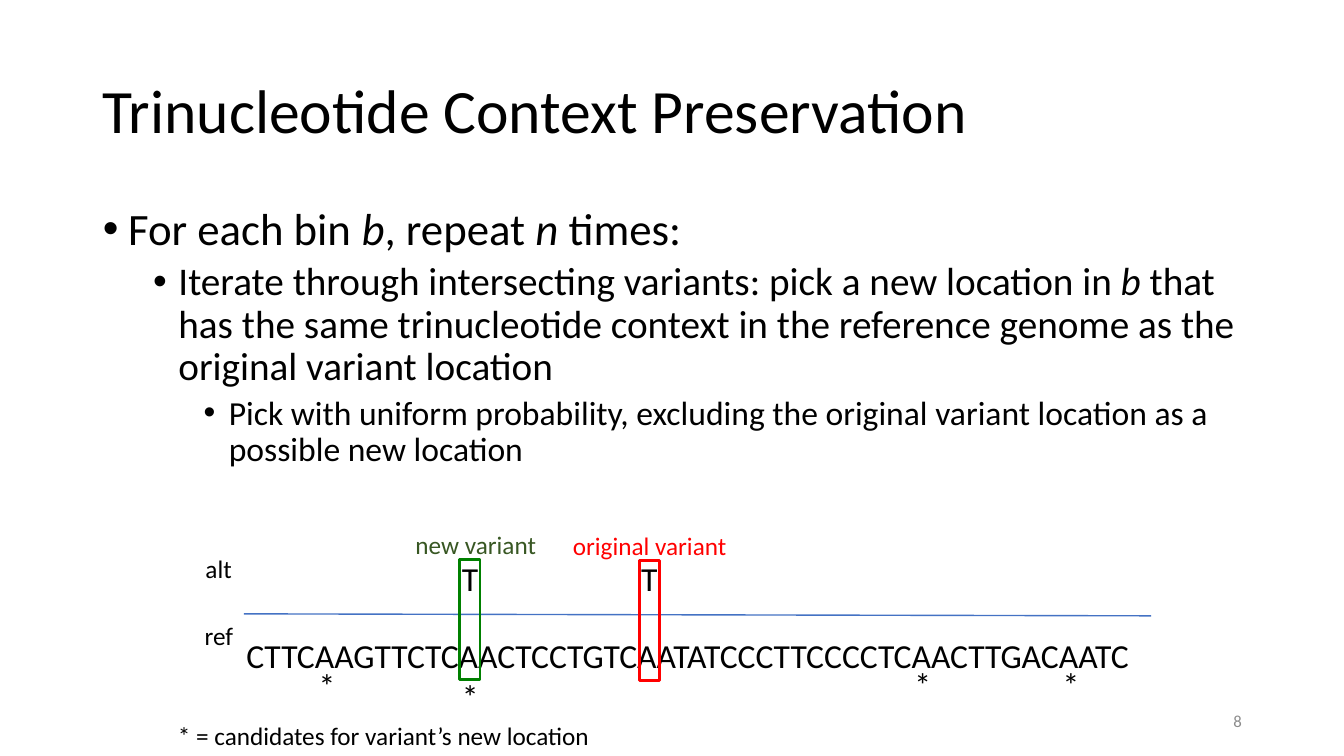
import collections

import pptx
import pptx.dml.color
import pptx.enum.shapes
import pptx.enum.text
import pptx.oxml
import pptx.oxml.ns
import pptx.util

RGBColor = pptx.dml.color.RGBColor
ALIGN = pptx.enum.text.PP_ALIGN
ANCHOR = pptx.enum.text.MSO_ANCHOR

BLACK = RGBColor(0x00, 0x00, 0x00)
GRAY = RGBColor(0x8C, 0x8C, 0x8C)
BLUE = RGBColor(0x44, 0x72, 0xC4)
RED = RGBColor(0xFF, 0x00, 0x00)
GREEN = RGBColor(0x00, 0x80, 0x00)
DARK_GREEN = RGBColor(0x38, 0x57, 0x23)
FONT = "Calibri"

SLIDE_WIDTH = pptx.util.Inches(13.33)
SLIDE_HEIGHT = pptx.util.Inches(7.5)

# All boxes are percentages of the slide's width and height.
Box = collections.namedtuple("Box", "left top width height")
TITLE = Box(6.9, 5.33, 86.25, 19.33)
STEPS = Box(6.9, 26.67, 86.25, 63.47)
NUMBER = Box(70.65, 92.67, 22.5, 5.33)
ALIGNMENT = Box(12.5, 69.33, 74.2, 30.67)

SMALL_ROW, LARGE_ROW = 5.33, 6.67
LETTER_WIDTH = 2.8
FRAME_WIDTH, FRAME_HEIGHT = 1.5, 15.87


def across(share):
    return round(SLIDE_WIDTH * share / 100)


def down(share):
    return round(SLIDE_HEIGHT * share / 100)


def emu(box):
    return across(box.left), down(box.top), across(box.width), down(box.height)


def within(outer, left, top, width, height):
    return Box(outer.left + left, outer.top + top, width, height)


def move(shape, box):
    shape.left, shape.top, shape.width, shape.height = emu(box)


def write(paragraph, text, size=18, color=BLACK, align=ALIGN.LEFT):
    """Fill a paragraph; parts between underscores are italic."""
    paragraph.alignment = align
    for index, part in enumerate(text.split("_")):
        run = paragraph.add_run()
        run.text = part
        run.font.name = FONT
        run.font.size = pptx.util.Pt(size)
        run.font.color.rgb = color
        run.font.italic = index % 2 == 1


def add_text(slide, box, text, wrap=False, anchor=ANCHOR.TOP, **style):
    frame = slide.shapes.add_textbox(*emu(box)).text_frame
    frame.word_wrap = wrap
    frame.vertical_anchor = anchor
    write(frame.paragraphs[0], text, **style)


def set_bullet(paragraph, level):
    properties = paragraph._p.get_or_add_pPr()
    properties.set("marL", str(pptx.util.Inches(0.25 + 0.5 * level)))
    properties.set("indent", str(-pptx.util.Inches(0.25)))
    namespace = pptx.oxml.ns.nsdecls("a")
    properties.append(pptx.oxml.parse_xml(f'<a:buFont {namespace} typeface="Arial"/>'))
    properties.append(pptx.oxml.parse_xml(f'<a:buChar {namespace} char="•"/>'))


def add_title(slide, box):
    title = slide.shapes.title
    move(title, box)
    frame = title.text_frame
    frame.auto_size = pptx.enum.text.MSO_AUTO_SIZE.NONE
    frame.vertical_anchor = ANCHOR.MIDDLE
    frame.paragraphs[0].line_spacing = 0.9
    write(frame.paragraphs[0], "Trinucleotide Context Preservation", size=44)


def add_steps(slide, box):
    steps = slide.placeholders[1]
    move(steps, box)
    frame = steps.text_frame
    frame.auto_size = pptx.enum.text.MSO_AUTO_SIZE.NONE
    lines = [
        ("For each bin _b_, repeat _n_ times:", 32, 10),
        ("Iterate through intersecting variants: pick a new location in _b_ that has the same "
         "trinucleotide context in the reference genome as the original variant location", 28, 5),
        ("Pick with uniform probability, excluding the original variant location "
         "as a possible new location", 24, 5),
    ]
    for level, (text, size, space) in enumerate(lines):
        paragraph = frame.add_paragraph() if level else frame.paragraphs[0]
        paragraph.level = level
        paragraph.line_spacing = 0.9
        paragraph.space_before = pptx.util.Pt(space)
        paragraph.space_after = pptx.util.Pt(0)
        set_bullet(paragraph, level)
        write(paragraph, text, size=size)


def add_divider(slide, box):
    """Draw the line between the alt and ref rows."""
    divider = slide.shapes.add_connector(
        pptx.enum.shapes.MSO_CONNECTOR.STRAIGHT,
        across(box.left + 5.65), down(box.top + 11.87),
        across(box.left + 73.15), down(box.top + 12.13))
    divider.line.color.rgb = BLUE
    divider.line.width = pptx.util.Pt(1)
    divider._element.spPr.append(
        pptx.oxml.parse_xml(f'<a:effectLst {pptx.oxml.ns.nsdecls("a")}/>'))


def add_letter(slide, box, letter, center, top):
    add_text(slide, within(box, center - LETTER_WIDTH / 2, top, LETTER_WIDTH, LARGE_ROW),
             letter, size=24, align=ALIGN.CENTER)


def add_variant(slide, box, label, center, label_center, label_width, top,
                label_color, frame_color):
    add_letter(slide, box, "T", center, 3.87)
    frame = slide.shapes.add_shape(
        pptx.enum.shapes.MSO_SHAPE.RECTANGLE,
        *emu(within(box, center - FRAME_WIDTH / 2, top + 4.67, FRAME_WIDTH, FRAME_HEIGHT)))
    frame.shadow.inherit = False
    frame.fill.background()
    frame.line.color.rgb = frame_color
    frame.line.width = pptx.util.Pt(2)
    add_text(slide, within(box, label_center - label_width / 2, top, label_width, SMALL_ROW),
             label, color=label_color, align=ALIGN.CENTER)


def add_alignment(slide, box):
    """Draw the reference sequence with its variants and candidate marks."""
    add_divider(slide, box)
    add_text(slide, within(box, 5.1, 14, 69.1, LARGE_ROW),
             "CTTCAAGTTCTCAACTCCTGTCAATATCCCTTCCCCTCAACTTGACAATC", wrap=True, size=24)
    add_text(slide, within(box, 2, 12, 3.75, SMALL_ROW), "ref")
    add_text(slide, within(box, 2.05, 3.2, 3.53, SMALL_ROW), "alt")
    add_variant(slide, box, "original variant", 35.82, 35.84, 13.28, 0.13, RED, RED)
    add_variant(slide, box, "new variant", 22.47, 22.9, 10.8, 0, DARK_GREEN, GREEN)
    for center, top in [(11.84, 18), (22.49, 19.47), (56.16, 17.87), (67.19, 17.87)]:
        add_letter(slide, box, "*", center, top)
    add_text(slide, within(box, 0, 25.33, 32.5, SMALL_ROW),
             "* = candidates for variant’s new location")


def main():
    deck = pptx.Presentation()
    deck.slide_width, deck.slide_height = SLIDE_WIDTH, SLIDE_HEIGHT
    slide = deck.slides.add_slide(deck.slide_layouts[1])
    add_title(slide, TITLE)
    add_steps(slide, STEPS)
    add_text(slide, NUMBER, "8", wrap=True, anchor=ANCHOR.MIDDLE,
             size=12, color=GRAY, align=ALIGN.RIGHT)
    add_alignment(slide, ALIGNMENT)
    deck.save("out.pptx")


if __name__ == "__main__":
    main()
